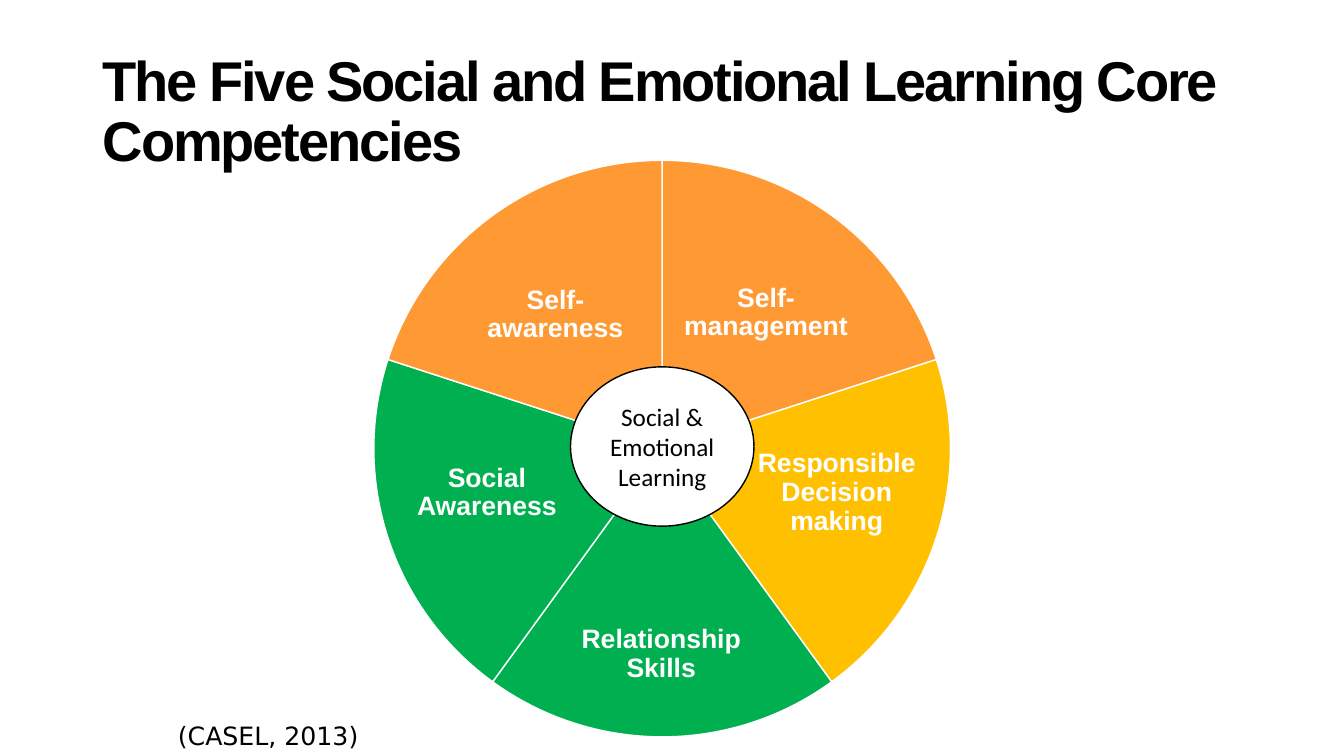
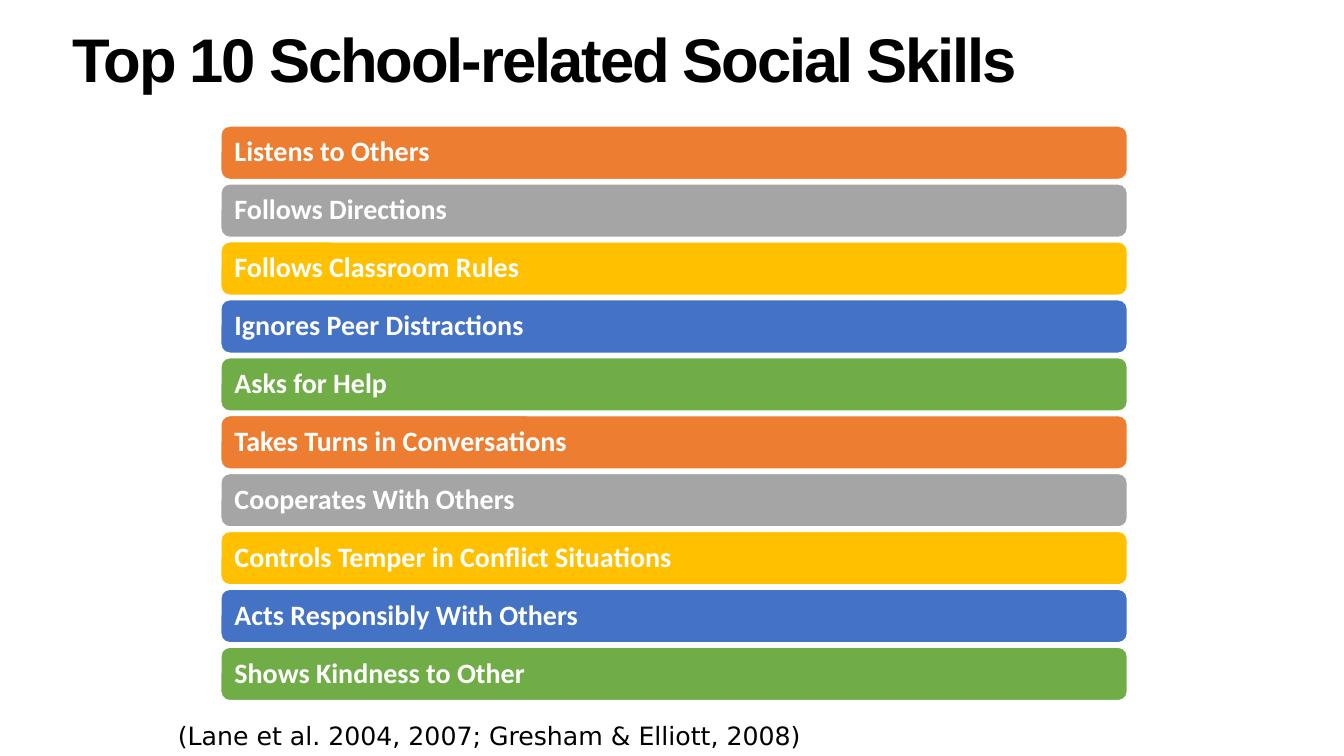
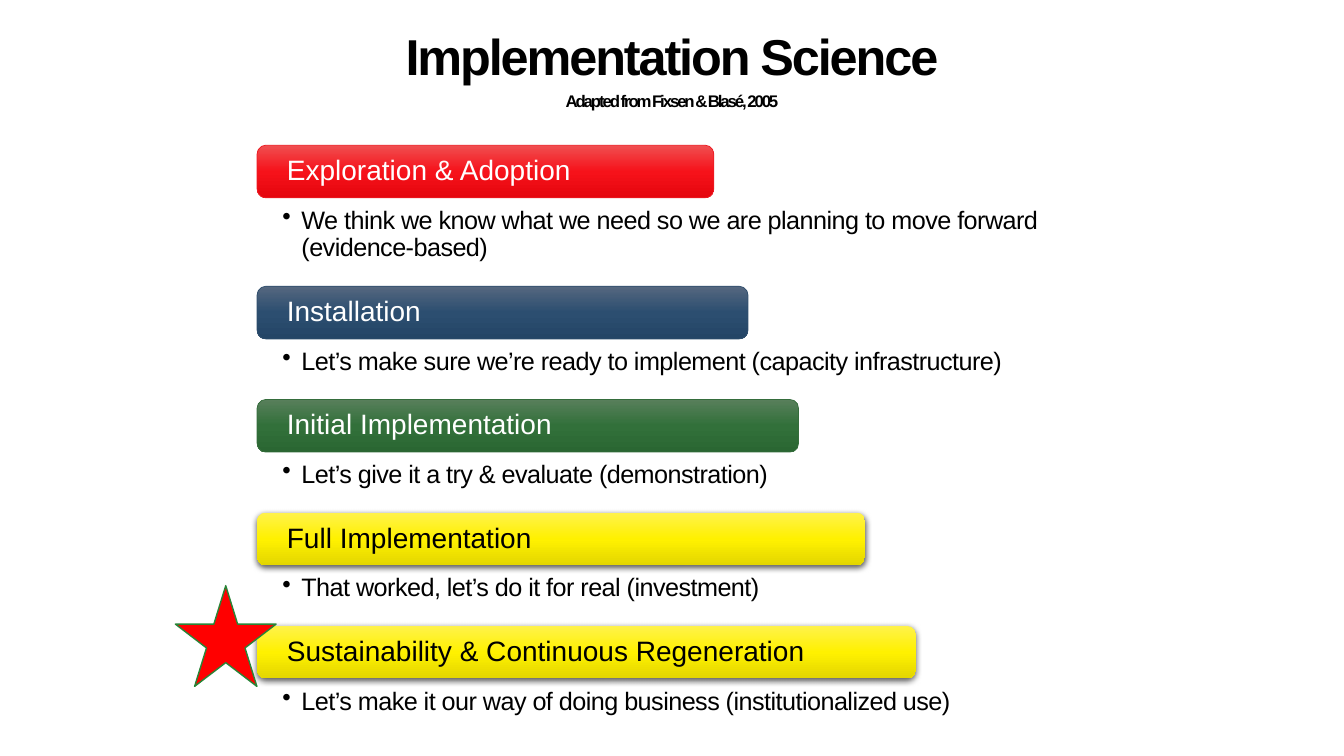
from pptx import Presentation
from pptx.dml.color import RGBColor
from pptx.enum.shapes import MSO_SHAPE as SHAPE
from pptx.enum.text import MSO_ANCHOR as ANCHOR, MSO_AUTO_SIZE as AUTOSIZE, PP_ALIGN as ALIGN
from pptx.oxml.ns import qn
from pptx.oxml.xmlchemy import OxmlElement
from pptx.util import Inches, Pt

WIDTH, HEIGHT = Inches(13.33), Inches(7.5)
BLACK, WHITE = "000000", "FFFFFF"
ORANGE, AMBER, GREEN = "FF9933", "FFC000", "00B050"
BAR_COLORS = ["ED7D31", "A5A5A5", AMBER, "4472C4", "70AD47"]
YELLOW = ["FFF24B", "FFF100", "E3D600"]

COMPETENCIES = [
    ("Self-management", ORANGE, (49.72, 32.53, 14.55, 17.73)),
    ("Responsible Decision making", AMBER, (55.88, 55.6, 12.75, 19.2)),
    ("Relationship Skills", GREEN, (41.55, 78.4, 15.3, 16.4)),
    ("Social Awareness", GREEN, (29.85, 55.6, 12.75, 19.2)),
    ("Self-awareness", ORANGE, (34.05, 32.8, 14.55, 17.73)),
]
SKILLS = [
    "Listens to Others",
    "Follows Directions",
    "Follows Classroom Rules",
    "Ignores Peer Distractions",
    "Asks for Help",
    "Takes Turns in Conversations",
    "Cooperates With Others",
    "Controls Temper in Conflict Situations",
    "Acts Responsibly With Others",
    "Shows Kindness to Other",
]
STAGES = [
    ("Exploration & Adoption", 33.98, 14, ["F04F51", "F6121A", "E5060E"], "EC1C24", WHITE,
     "We think we know what we need so we are planning to move forward (evidence-based)"),
    ("Installation", 36.53, 10.3, ["55677F", "2C4E70", "244566"], "2F4E6D", WHITE,
     "Let’s make sure we’re ready to implement (capacity infrastructure)"),
    ("Initial Implementation", 40.29, 10.3, ["587F5B", "32703A", "2A6632"], "356D3C", WHITE,
     "Let’s give it a try & evaluate (demonstration)"),
    ("Full Implementation", 45.24, 10.3, YELLOW, None, BLACK,
     "That worked, let’s do it for real (investment)"),
    ("Sustainability & Continuous Regeneration", 48.99, 10.3, YELLOW, None, BLACK,
     "Let’s make it our way of doing business (institutionalized use)"),
]


def rgb(color):
    """Turn a hex string into a colour."""
    return RGBColor.from_string(color)


def area(x, y, w, h):
    """Turn percentages of the slide into left, top, width and height."""
    return [int(size * share / 100) for size, share in zip((WIDTH, HEIGHT) * 2, (x, y, w, h))]


def write(p, text, size, font="Arial", color=BLACK, bold=False, align=None, leading=None, track=0):
    """Add a formatted run to a paragraph."""
    p.alignment, p.line_spacing = align, leading
    r = p.add_run()
    r.text = text
    r.font.size, r.font.name, r.font.bold = Pt(size), font, bold
    r.font.color.rgb = rgb(color)
    if track:
        r._r.get_or_add_rPr().set("spc", str(round(track * 100)))


def frame(sp, anchor=ANCHOR.MIDDLE, margins=(0.1, 0.05, 0.1, 0.05)):
    """Set wrapping, anchor and margins in inches, and return the text frame."""
    tf = sp.text_frame
    tf.word_wrap, tf.auto_size, tf.vertical_anchor = True, AUTOSIZE.NONE, anchor
    tf.margin_left, tf.margin_top, tf.margin_right, tf.margin_bottom = map(Inches, margins)
    return tf


def textbox(s, box, text, size, anchor=ANCHOR.MIDDLE, margins=(0.1, 0.05, 0.1, 0.05), **fmt):
    """Add a text box and return its paragraph."""
    p = frame(s.shapes.add_textbox(*area(*box)), anchor, margins).paragraphs[0]
    write(p, text, size, **fmt)
    return p


def shape(s, kind, box, fill=None, line=None, width=1):
    """Add a preset shape without shadow."""
    sp = s.shapes.add_shape(kind, *area(*box))
    sp.shadow.inherit = False
    if fill:
        sp.fill.solid()
        sp.fill.fore_color.rgb = rgb(fill)
    if line:
        sp.line.color.rgb, sp.line.width = rgb(line), Pt(width)
    else:
        sp.line.fill.background()
    return sp


def color_node(tag, parent, color):
    """Add an element that holds one colour and return both."""
    node, clr = OxmlElement(tag), OxmlElement("a:srgbClr")
    clr.set("val", color)
    node.append(clr)
    parent.append(node)
    return node, clr


def shade(sp, colors):
    """Fill a shape from top to bottom with evenly spaced colours."""
    sp.fill.gradient()
    sp.fill.gradient_angle = 270
    stops = sp._element.spPr.find(".//" + qn("a:gsLst"))
    for stop in list(stops):
        stops.remove(stop)
    for i, color in enumerate(colors):
        node, _ = color_node("a:gs", stops, color)
        node.set("pos", str(100000 * i // (len(colors) - 1)))


def drop_shadow(sp):
    """Put a soft shadow below a shape."""
    effects = sp._element.spPr.find(qn("a:effectLst"))
    node, clr = color_node("a:outerShdw", effects, BLACK)
    for name, value in (("blurRad", Pt(4.5)), ("dist", Pt(1.5)), ("dir", 5400000), ("rotWithShape", 0)):
        node.set(name, str(int(value)))
    alpha = OxmlElement("a:alpha")
    alpha.set("val", "63000")
    clr.append(alpha)


def bullet(p, indent):
    """Give a paragraph a hanging bullet."""
    pPr = p._p.get_or_add_pPr()
    pPr.set("marL", str(Inches(indent)))
    pPr.set("indent", str(-Inches(indent)))
    char = OxmlElement("a:buChar")
    char.set("char", "•")
    pPr.append(char)


def titled_slide(prs, box, text, size, align=ALIGN.LEFT):
    """Add a slide with a bold, tight title."""
    s = prs.slides.add_slide(prs.slide_layouts[5])
    title = s.shapes.title
    title.left, title.top, title.width, title.height = area(*box)
    write(frame(title).paragraphs[0], text, size, bold=True, align=align, leading=0.9, track=-1.5)
    return s


def citation(s, text, width):
    """Add the source line at the foot of the slide."""
    textbox(s, (12.5, 94.67, width, 5.33), text, 18, ANCHOR.TOP, font="DejaVu Sans")


def bar(s, box, text, size, margin, fill=None, line=None, width=1, **fmt):
    """Add a rounded bar with a label."""
    sp = shape(s, SHAPE.ROUNDED_RECTANGLE, box, fill, line, width)
    write(frame(sp, margins=(margin, 0, margin, 0)).paragraphs[0], text, size,
          align=ALIGN.LEFT, leading=0.9, **fmt)
    return sp


def competencies_slide(prs):
    """Build the wheel of competencies."""
    s = titled_slide(prs, (6.9, 5.33, 86.25, 19.33),
                     "The Five Social and Emotional Learning Core Competencies", 40)
    sweep = 360 / len(COMPETENCIES)
    for i, (label, color, box) in enumerate(COMPETENCIES):
        sector = shape(s, SHAPE.PIE, (27.82, 21.2, 42.9, 76.27), color, WHITE)
        for j in range(2):
            sector.adjustments[j] = (270 + (i + j) * sweep) % 360 * 0.6
        textbox(s, box, label, 19, margins=[0.03] * 4, color=WHITE, bold=True,
                align=ALIGN.CENTER, leading=0.9)
    citation(s, "(CASEL, 2013)", 15.5)
    hub = shape(s, SHAPE.OVAL, (42.45, 48.53, 13.65, 21.07), WHITE, BLACK)
    write(frame(hub).paragraphs[0], "Social & Emotional Learning", 18, font="Calibri",
          align=ALIGN.CENTER)


def skills_slide(prs):
    """Build the stack of skill bars."""
    s = titled_slide(prs, (4.65, -1.33, 86.25, 19.33), "Top 10 School-related Social Skills", 44)
    for i, skill in enumerate(SKILLS):
        bar(s, (16.43, 16.67 + 7.66 * i, 67.45, 7.07), skill, 20, 0.11,
            BAR_COLORS[i % len(BAR_COLORS)], WHITE, font="Calibri", color=WHITE, bold=True)
    citation(s, "(Lane et al. 2004, 2007; Gresham & Elliott, 2008)", 49.43)


def stages_slide(prs):
    """Build the stages of implementation."""
    s = titled_slide(prs, (12.5, 0.93, 75, 17.07), "Implementation Science", 36, ALIGN.CENTER)
    p = s.shapes.title.text_frame.add_paragraph()
    p.space_before = Pt(4)
    write(p, "Adapted from Fixsen & Blasé, 2005", 12, bold=True, align=ALIGN.CENTER,
          leading=0.9, track=-1.5)
    top = 22.67
    for label, width, height, colors, line, color, note in STAGES:
        p = textbox(s, (15.75, top, 67.65, height), note, 18, ANCHOR.TOP,
                    (0.7, 0.36, 0.7, 0.14), leading=0.9, track=-0.4)
        bullet(p, 0.19)
        sp = bar(s, (19.13, top - 3.47, width, 6.97), label, 20, 0.27, line=line, width=0.5,
                 color=color)
        shade(sp, colors)
        if not line:
            drop_shadow(sp)
        top += height + 4.67
    shape(s, SHAPE.STAR_5_POINT, (13.05, 77.47, 7.5, 13.33), "FF0000", "298437")


def main():
    """Build and save the presentation."""
    prs = Presentation()
    prs.slide_width, prs.slide_height = WIDTH, HEIGHT
    competencies_slide(prs)
    skills_slide(prs)
    stages_slide(prs)
    prs.save("out.pptx")


if __name__ == "__main__":
    main()
